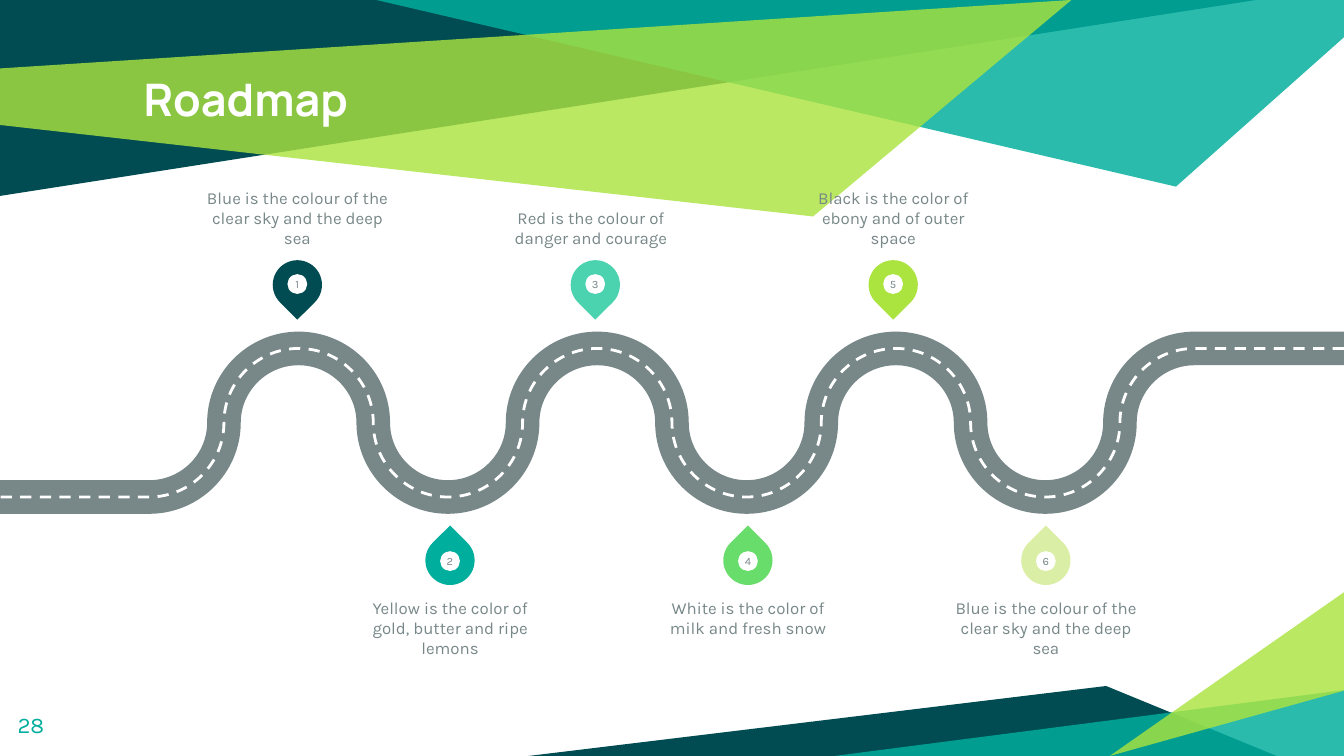
from lxml.etree import SubElement
from pptx import Presentation
from pptx.dml.color import RGBColor
from pptx.enum.dml import MSO_LINE
from pptx.enum.shapes import MSO_SHAPE
from pptx.enum.text import MSO_ANCHOR, MSO_AUTO_SIZE, PP_ALIGN
from pptx.oxml.ns import qn
from pptx.util import Pt

C = {"navy": "004C52", "teal": "00AE9D", "lime": "ABE33F", "mint": "4BD3B0",
     "green": "68DD6B", "pale": "DBEEA6", "gray": "788788", "white": "FFFFFF"}

BANDS = [
    ("navy", 100, [(0, 0), (0, 105), (673, 0)]),
    ("teal", 83, [(201.6, 0), (630, 100), (720, 20), (720, 0)]),
    ("lime", 81, [(0, 36.7), (0, 67), (435.6, 116), (574, 0)]),
    ("navy", 100, [(283, 405), (684, 405), (592.6, 367.5)]),
    ("teal", 83, [(720, 369.7), (720, 405), (447, 405)]),
    ("lime", 81, [(720, 370), (720, 317.3), (594.5, 405)]),
]
STOPS = [
    ("Blue is the colour of the clear sky and the deep sea", "navy", 0),
    ("Yellow is the color of gold, butter and ripe lemons", "teal", 0),
    ("Red is the colour of danger and courage", "mint", -2.4),
    ("White is the color of milk and fresh snow", "green", 0),
    ("Black is the color of ebony and of outer space", "lime", 0),
    ("Blue is the colour of the clear sky and the deep sea", "pale", 0),
]
STEP, RADIUS, ROAD_Y, BENDS, KAPPA = 80, 39.8, 226.5, 8, 0.55
PIN, DOT, LABEL_W, LABEL_H = 26.4, 10.6, 101.5, 41.8


def rgb(name):
    return RGBColor.from_string(C[name])


def write(shape, text, size, color="gray", font="Karla", bold=False,
          align=PP_ALIGN.LEFT, anchor=MSO_ANCHOR.TOP, inset=0):
    tf = shape.text_frame
    tf.auto_size = MSO_AUTO_SIZE.NONE
    tf.word_wrap = True
    tf.vertical_anchor = anchor
    tf.margin_left = tf.margin_right = tf.margin_top = tf.margin_bottom = Pt(inset)
    p = tf.paragraphs[0]
    p.alignment = align
    r = p.add_run()
    r.text = text
    r.font.size, r.font.name, r.font.bold = Pt(size), font, bold
    r.font.color.rgb = rgb(color)


def paint(shape, color, alpha=100):
    shape.shadow.inherit = False
    shape.line.fill.background()
    shape.fill.solid()
    shape.fill.fore_color.rgb = rgb(color)
    if alpha < 100:
        clr = shape._element.spPr.find(qn("a:solidFill")).find(qn("a:srgbClr"))
        SubElement(clr, qn("a:alpha")).set("val", str(alpha * 1000))


def outline(s, points, close):
    pts = [(Pt(x), Pt(y)) for x, y in points]
    fb = s.shapes.build_freeform(*pts[0])
    fb.add_line_segments(pts[1:], close=close)
    return fb.convert_to_shape()


def road_points():
    points = [(720, ROAD_Y - RADIUS)]
    for k in range(BENDS, 0, -1):
        side = 1 if k % 2 else -1
        points.append((STEP * k, ROAD_Y + side * RADIUS))
        if k > 1:
            points.append((STEP * (k - 0.5), ROAD_Y))
    return points + [(0, ROAD_Y + RADIUS)]


def round_bends(sp):
    ends = [(int(pt.get("x")), int(pt.get("y"))) for pt in sp._element.iter(qn("a:pt"))]
    lines = list(sp._element.iter(qn("a:lnTo")))
    for i, ln in enumerate(lines[1:-1]):
        (x0, y0), (x1, y1) = ends[i + 1:i + 3]
        dx, dy = (x1 - x0) * KAPPA, (y1 - y0) * KAPPA
        if i % 2:
            controls = [(x0, y0 + dy), (x1 - dx, y1)]
        else:
            controls = [(x0 + dx, y0), (x1, y1 - dy)]
        curve = SubElement(ln.getparent(), qn("a:cubicBezTo"))
        for x, y in controls + [(x1, y1)]:
            pt = SubElement(curve, qn("a:pt"))
            pt.set("x", str(round(x)))
            pt.set("y", str(round(y)))
        ln.getparent().replace(ln, curve)


def add_road(s, color, width, dash=None):
    sp = outline(s, road_points(), False)
    round_bends(sp)
    sp.shadow.inherit = False
    sp.fill.background()
    sp.line.color.rgb = rgb(color)
    sp.line.width = Pt(width)
    if dash:
        sp.line.dash_style = dash


def centered(shapes, kind, x, y, size):
    return shapes.add_shape(kind, Pt(x - size / 2), Pt(y - size / 2), Pt(size), Pt(size))


def add_stop(s, n, text, color, shift):
    above = n % 2 == 1
    x = 79.5 + 79.8 * n + (0 if above else 2)
    y = 152.6 if above else 300.2
    g = s.shapes.add_group_shape()
    pin = centered(g.shapes, MSO_SHAPE.TEAR, x, y, PIN)
    pin.rotation = 135 if above else 315
    paint(pin, color)
    dot = centered(g.shapes, MSO_SHAPE.OVAL, x, y - 0.4 if above else y + 0.4, DOT)
    paint(dot, "white")
    write(dot, str(n), 6, align=PP_ALIGN.CENTER, anchor=MSO_ANCHOR.MIDDLE)
    label = s.shapes.add_textbox(Pt(x + shift - LABEL_W / 2), Pt(91.2 if above else 320.2),
                                 Pt(LABEL_W), Pt(LABEL_H))
    write(label, text, 9, align=PP_ALIGN.CENTER,
          anchor=MSO_ANCHOR.BOTTOM if above else MSO_ANCHOR.TOP)


def main():
    """Build the roadmap slide."""
    prs = Presentation()
    prs.slide_width, prs.slide_height = Pt(720), Pt(405)
    s = prs.slides.add_slide(prs.slide_layouts[5])
    for color, alpha, points in BANDS:
        paint(outline(s, points, True), color, alpha)
    title = s.shapes.title
    title.left, title.top, title.width, title.height = Pt(69.8), Pt(31.2), Pt(580), Pt(67.7)
    write(title, "Roadmap", 24, "white", "Manrope", True, inset=7.2)
    s.shapes._spTree.append(title._element)
    number = s.shapes.add_textbox(Pt(2.3), Pt(373.7), Pt(43), Pt(31))
    write(number, "28", 12, "teal", inset=7.2)
    add_road(s, "gray", 18)
    add_road(s, "white", 1.5, MSO_LINE.DASH)
    for n, stop in enumerate(STOPS, 1):
        add_stop(s, n, *stop)
    prs.save("out.pptx")


if __name__ == "__main__":
    main()
